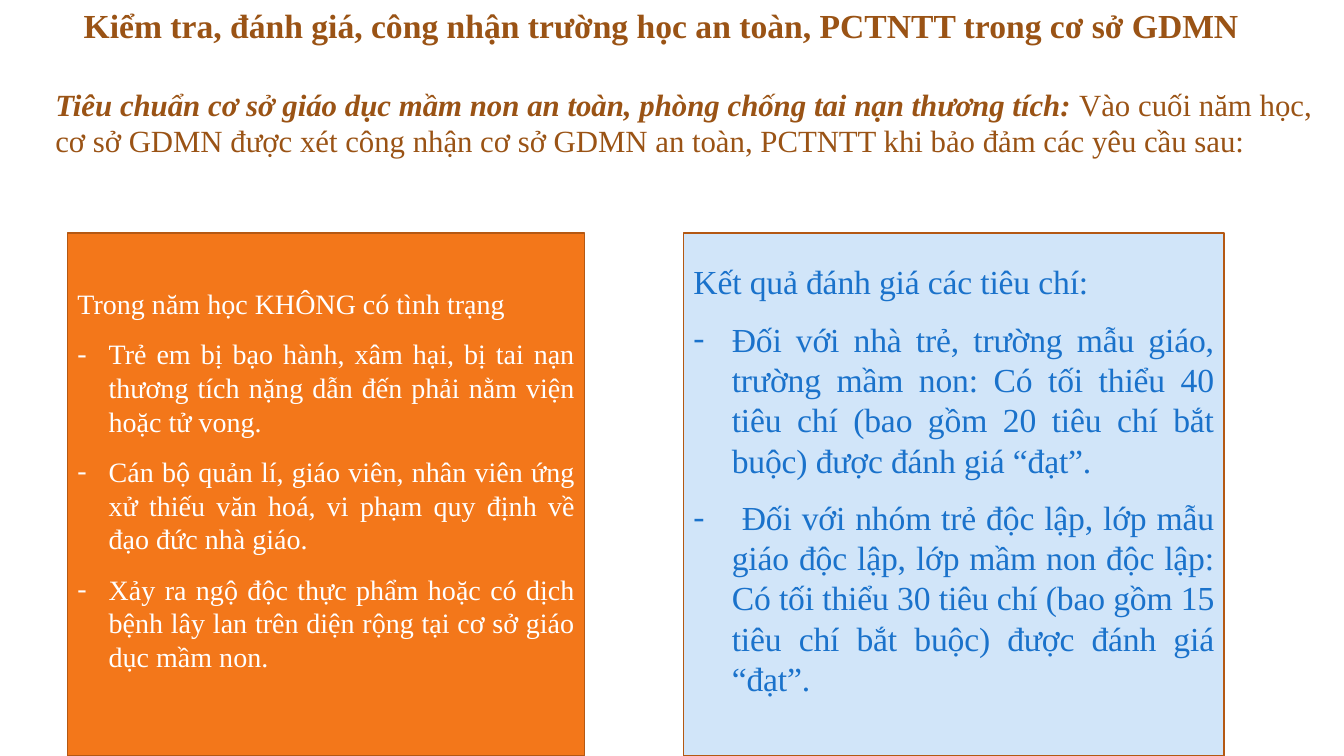
import pptx
import pptx.util
import pptx.dml.color
import pptx.enum.shapes
import pptx.enum.text
import lxml.etree

PX = 9144
FACE = "Times New Roman"
HUES = {
    "brown": "9A5315",
    "orange": "F3771A",
    "rust": "B45813",
    "white": "FFFFFF",
    "pale": "D1E5F9",
    "blue": "1A72CB",
}
ALIGN = pptx.enum.text.PP_ALIGN
ANCHOR = pptx.enum.text.MSO_ANCHOR


def rgb(name):
    return pptx.dml.color.RGBColor.from_string(HUES[name])


def style(para, size, hue, align):
    para.alignment = align
    para.font.name = FACE
    para.font.size = pptx.util.Pt(size)
    para.font.color.rgb = rgb(hue)


deck = pptx.Presentation()
deck.slide_width = 1333 * PX
deck.slide_height = 750 * PX
slide = deck.slides.add_slide(deck.slide_layouts[5])

title = slide.shapes.title
title.left, title.top, title.width, title.height = [n * PX for n in (23, 18, 1246, 36)]
frame = title.text_frame
frame.word_wrap = False
frame.auto_size = pptx.enum.text.MSO_AUTO_SIZE.NONE
frame.vertical_anchor = ANCHOR.TOP
frame.margin_left = 60 * PX
frame.text = "Kiểm tra, đánh giá, công nhận trường học an toàn, PCTNTT trong cơ sở GDMN"
para = frame.paragraphs[0]
para.line_spacing = pptx.util.Pt(16)
style(para, 24, "brown", ALIGN.LEFT)
para.font.bold = True

intro = slide.shapes.add_textbox(*[n * PX for n in (45, 82, 1266, 264)])
intro.text_frame.word_wrap = True
para = intro.text_frame.paragraphs[0]
para.line_spacing = 0.97
style(para, 22, "brown", ALIGN.JUSTIFY)
lead = para.add_run()
lead.text = "Tiêu chuẩn cơ sở giáo dục mầm non an toàn, phòng chống tai nạn thương tích: "
lead.font.bold = lead.font.italic = True
para.add_run().text = (
    "Vào cuối năm học, cơ sở GDMN được xét công nhận cơ sở GDMN an toàn, "
    "PCTNTT khi bảo đảm các yêu cầu sau:"
)

panels = [
    (67, 513, "orange", "white", 20, 31, 0, [
        "Trong năm học KHÔNG có tình trạng",
        "Trẻ em bị bạo hành, xâm hại, bị tai nạn thương tích nặng dẫn đến phải nằm viện hoặc tử vong.",
        "Cán bộ quản lí, giáo viên, nhân viên ứng xử thiếu văn hoá, vi phạm quy định về đạo đức nhà giáo.",
        "Xảy ra ngộ độc thực phẩm hoặc có dịch bệnh lây lan trên diện rộng tại cơ sở giáo dục mầm non.",
    ]),
    (678, 536, "pale", "blue", 24, 38, -10, [
        "Kết quả đánh giá các tiêu chí:",
        "Đối với nhà trẻ, trường mẫu giáo, trường mầm non: Có tối thiểu 40 tiêu chí "
        "(bao gồm 20 tiêu chí bắt buộc) được đánh giá “đạt”.",
        " Đối với nhóm trẻ độc lập, lớp mẫu giáo độc lập, lớp mầm non độc lập: Có tối thiểu 30 tiêu chí "
        "(bao gồm 15 tiêu chí bắt buộc) được đánh giá “đạt”.",
    ]),
]

for left, width, fill, ink, size, indent, track, lines in panels:
    panel = slide.shapes.add_shape(
        pptx.enum.shapes.MSO_SHAPE.RECTANGLE, left * PX, 231 * PX, width * PX, 519 * PX
    )
    panel.shadow.inherit = False
    panel.fill.solid()
    panel.fill.fore_color.rgb = rgb(fill)
    panel.line.color.rgb = rgb("rust")
    panel.line.width = pptx.util.Pt(1)
    frame = panel.text_frame
    frame.word_wrap = True
    frame.vertical_anchor = ANCHOR.MIDDLE
    frame.margin_bottom = 34 * PX
    for place, line in enumerate(lines):
        para = frame.add_paragraph() if place else frame.paragraphs[0]
        para.text = line
        para.space_after = pptx.util.Pt(6)
        props = para._p.get_or_add_pPr()
        if place:
            para.space_before = pptx.util.Pt(6)
            props.set("marL", str(indent * PX))
            props.set("indent", str(-indent * PX))
            font = lxml.etree.SubElement(props, pptx.oxml.ns.qn("a:buFont"))
            font.set("typeface", FACE)
            mark = lxml.etree.SubElement(props, pptx.oxml.ns.qn("a:buChar"))
            mark.set("char", "-")
        style(para, size, ink, ALIGN.JUSTIFY)
        if track:
            props.get_or_add_defRPr().set("spc", str(track))

deck.save("out.pptx")
